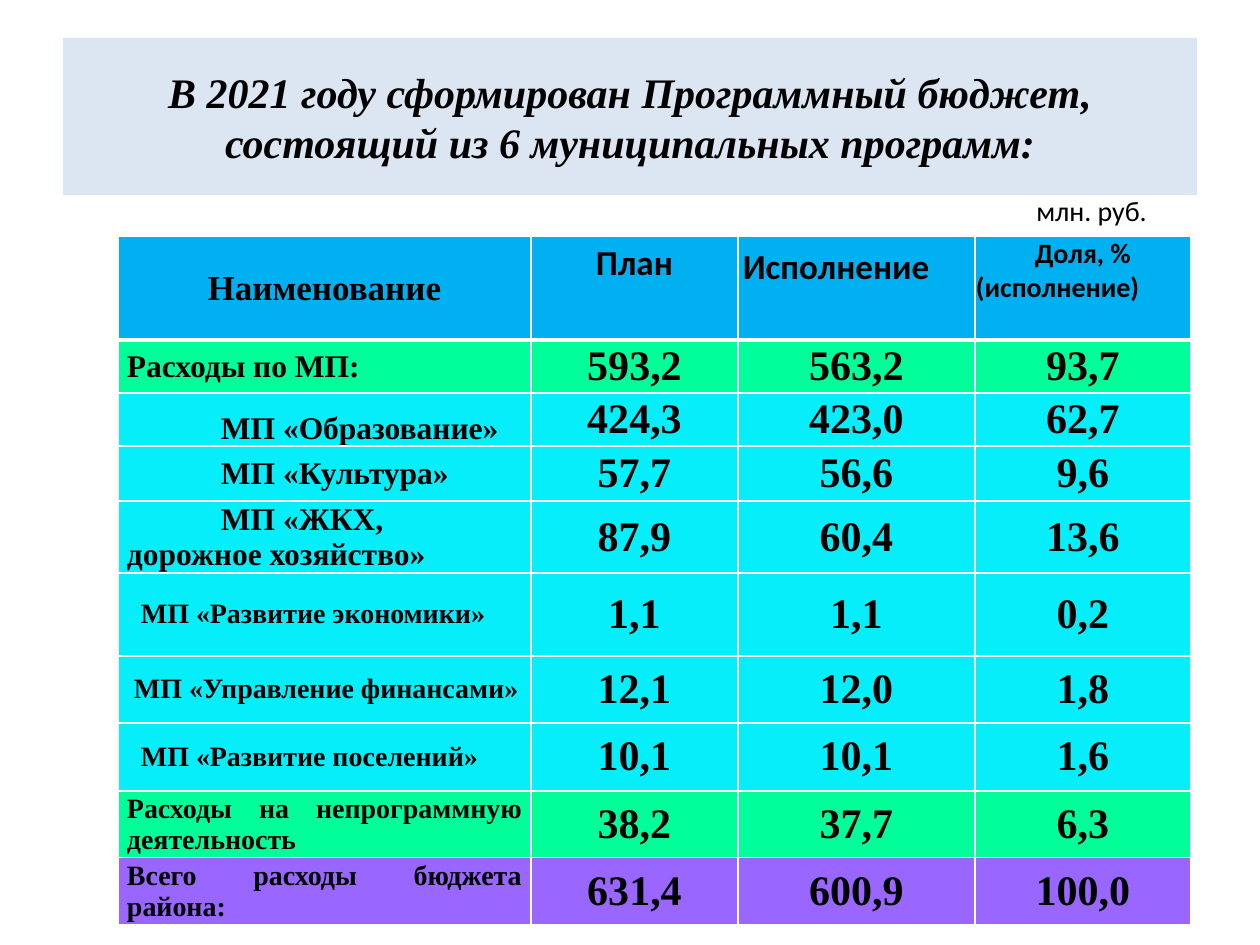
from lxml.etree import SubElement
from pptx import Presentation
from pptx.dml.color import RGBColor
from pptx.enum.shapes import MSO_SHAPE
from pptx.enum.text import MSO_ANCHOR, PP_ALIGN
from pptx.oxml.ns import qn
from pptx.util import Pt

PX = 914400 // 126
COLORS = {
    "black": "000000", "white": "FFFFFF", "title": "DCE6F2", "header": "00B0F0",
    "subtotal": "00FF99", "program": "06EEFA", "total": "9966FF",
}
SERIF, SANS = "Times New Roman", "Calibri"
LEFT, CENTER, JUSTIFY = PP_ALIGN.LEFT, PP_ALIGN.CENTER, PP_ALIGN.JUSTIFY
TOP, MIDDLE, BOTTOM = MSO_ANCHOR.TOP, MSO_ANCHOR.MIDDLE, MSO_ANCHOR.BOTTOM


def rgb(name):
    return RGBColor.from_string(COLORS[name])


def write(p, text, size=24, font=SERIF, bold=True, italic=False, align=CENTER, indent=0):
    """Put text in a paragraph; indent is the first-line indent in px."""
    p.alignment = align
    if indent:
        p._p.get_or_add_pPr().set("indent", str(indent * PX))
    r = p.add_run()
    r.text = text
    r.font.size, r.font.name = Pt(size), font
    r.font.bold, r.font.italic = bold, italic
    r.font.color.rgb = rgb("black")


class SlideBuilder:
    def __init__(self, prs):
        self.s = prs.slides.add_slide(prs.slide_layouts[6])

    def banner(self, box, text, fill):
        sp = self.s.shapes.add_shape(MSO_SHAPE.RECTANGLE, *[v * PX for v in box])
        sp.shadow.inherit = False
        sp.fill.solid()
        sp.fill.fore_color.rgb = rgb(fill)
        sp.line.fill.background()
        tf = sp.text_frame
        tf.word_wrap, tf.vertical_anchor = True, MIDDLE
        write(tf.paragraphs[0], text, italic=True)

    def label(self, box, text, **style):
        tf = self.s.shapes.add_textbox(*[v * PX for v in box]).text_frame
        tf.word_wrap = True
        write(tf.paragraphs[0], text, **style)

    def table(self, left, top, widths, heights):
        frame = self.s.shapes.add_table(
            len(heights), len(widths), left * PX, top * PX,
            sum(widths) * PX, sum(heights) * PX)
        table = frame.table
        table.first_row = table.horz_banding = False
        for column, width in zip(table.columns, widths):
            column.width = width * PX
        for row, height in zip(table.rows, heights):
            row.height = height * PX
        return table

    def cell(self, cell, fill, lines, anchor=MIDDLE, margins=(9, 0, 9, 0), top=1, bottom=1):
        """Fill a cell with (text, style) lines; top and bottom are border widths."""
        tc_pr = cell._tc.get_or_add_tcPr()
        for side, width in zip("LRTB", (1, 1, top, bottom)):
            ln = SubElement(tc_pr, qn(f"a:ln{side}"), w=str(Pt(width)))
            SubElement(SubElement(ln, qn("a:solidFill")), qn("a:srgbClr"), val=COLORS["white"])
        cell.fill.solid()
        cell.fill.fore_color.rgb = rgb(fill)
        cell.vertical_anchor = anchor
        (cell.margin_left, cell.margin_top,
         cell.margin_right, cell.margin_bottom) = [m * PX for m in margins]
        tf = cell.text_frame
        for i, (text, style) in enumerate(lines):
            write(tf.add_paragraph() if i else tf.paragraphs[0], text, **style)


HEADERS = [
    (MIDDLE, (1, 1, 1, 0), [("Наименование", dict(size=20))]),
    (TOP, (12, 6, 12, 6), [("План", dict(size=20, font=SANS))]),
    (TOP, (5, 10, 1, 0), [("Исполнение", dict(size=20, font=SANS, align=LEFT))]),
    (TOP, (1, 1, 1, 0), [("Доля, %", dict(size=16, font=SANS)),
                         ("(исполнение)", dict(size=16, font=SANS, align=LEFT))]),
]
LARGE = dict(size=18, align=LEFT)
SMALL = dict(size=16, align=JUSTIFY)
# height, fill, name, name style, anchor of the name, values
ROWS = [
    (53, "subtotal", "Расходы по МП:", LARGE, MIDDLE, "593,2 563,2 93,7"),
    (53, "program", "МП «Образование»", LARGE | dict(indent=94), BOTTOM, "424,3 423,0 62,7"),
    (55, "program", "МП «Культура»", LARGE | dict(indent=94), MIDDLE, "57,7 56,6 9,6"),
    (72, "program", "МП «ЖКХ, дорожное хозяйство»", LARGE | dict(indent=94), MIDDLE,
     "87,9 60,4 13,6"),
    (83, "program", "МП «Развитие экономики»", SMALL | dict(indent=14), MIDDLE, "1,1 1,1 0,2"),
    (67, "program", "МП «Управление финансами»", SMALL | dict(indent=7), MIDDLE,
     "12,1 12,0 1,8"),
    (68, "program", "МП «Развитие поселений»", SMALL | dict(indent=14), MIDDLE,
     "10,1 10,1 1,6"),
    (67, "subtotal", "Расходы на непрограммную деятельность", SMALL, MIDDLE, "38,2 37,7 6,3"),
    (67, "total", "Всего расходы бюджета района:", SMALL, MIDDLE, "631,4 600,9 100,0"),
]


def main():
    prs = Presentation()
    prs.slide_width, prs.slide_height = 1260 * PX, 945 * PX
    slide = SlideBuilder(prs)
    slide.banner((63, 38, 1134, 157),
                 "В 2021 году сформирован Программный бюджет, "
                 "состоящий из 6 муниципальных программ:", "title")

    table = slide.table(118, 236, [413, 207, 237, 216], [104] + [row[0] for row in ROWS])
    for c, (anchor, margins, lines) in enumerate(HEADERS):
        slide.cell(table.cell(0, c), "header", lines, anchor, margins, bottom=3)
    for i, (_, fill, name, style, anchor, values) in enumerate(ROWS, 1):
        top = 3 if i == 1 else 1
        slide.cell(table.cell(i, 0), fill, [(name, style)], anchor, top=top)
        for c, value in enumerate(values.split(), 1):
            slide.cell(table.cell(i, c), fill, [(value, {})], top=top)

    slide.label((1024, 187, 186, 47), "млн. руб.", size=16, font=SANS, bold=False, align=LEFT)
    prs.save("out.pptx")


if __name__ == "__main__":
    main()
